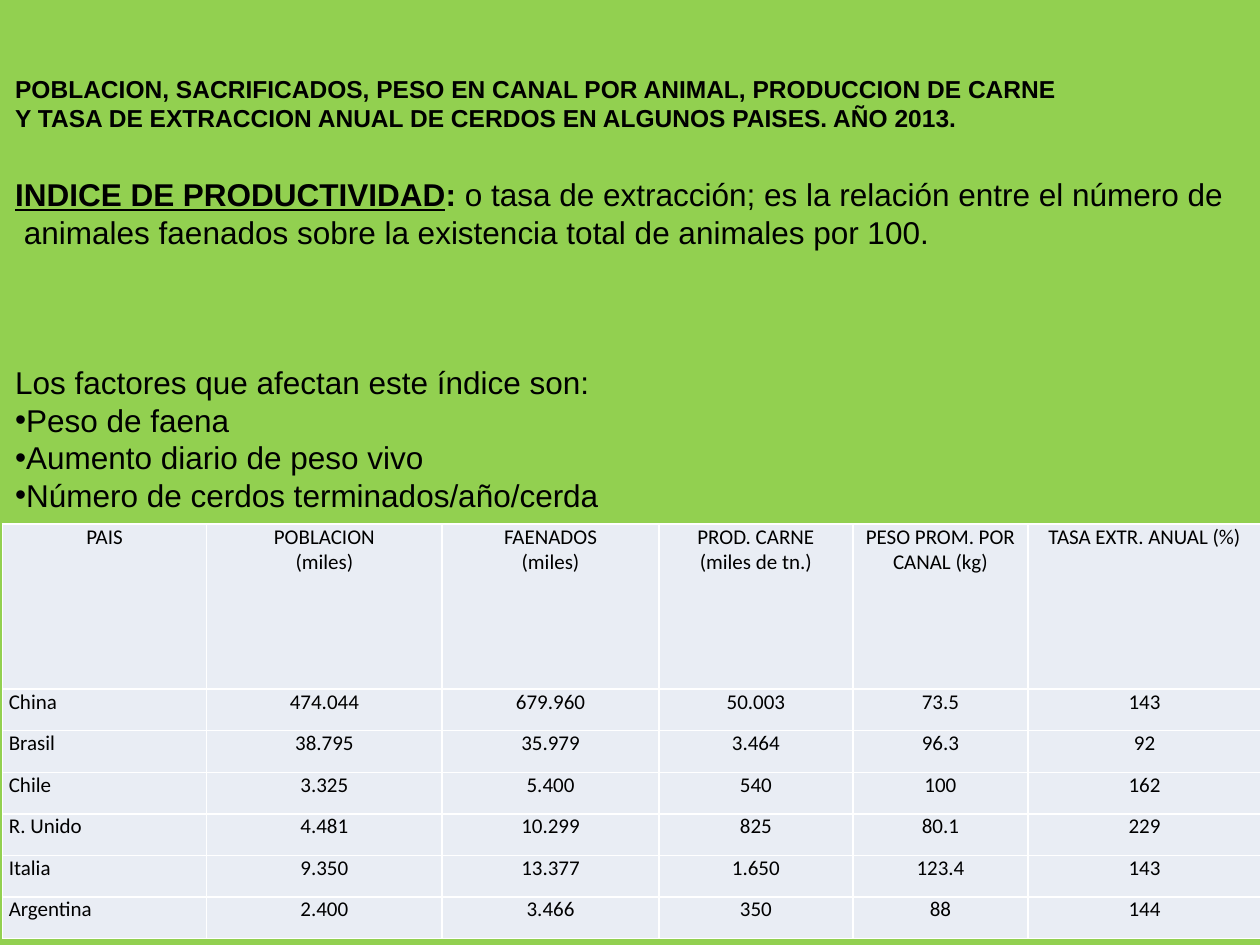
"""Build the slide on pig population, slaughter and extraction rate."""
from lxml import etree
from pptx import Presentation
from pptx.dml.color import RGBColor
from pptx.enum.text import MSO_ANCHOR, MSO_AUTO_SIZE, PP_ALIGN
from pptx.oxml.ns import qn
from pptx.util import Inches, Pt

LEFT, CENTER = PP_ALIGN.LEFT, PP_ALIGN.CENTER
TOP, NO_FIT = MSO_ANCHOR.TOP, MSO_AUTO_SIZE.NONE

TITLE = [
    "POBLACION, SACRIFICADOS, PESO EN CANAL POR ANIMAL, PRODUCCION DE CARNE",
    "Y TASA DE EXTRACCION ANUAL DE CERDOS EN ALGUNOS PAISES. AÑO 2013.",
]
FACTORS = [
    "Peso de faena",
    "Aumento diario de peso vivo",
    "Número de cerdos terminados/año/cerda",
]
COLUMNS = [1.62, 1.87, 1.72, 1.54, 1.39, 1.85]
ROWS = [
    ["PAIS", "POBLACION\n(miles)", "FAENADOS\n(miles)", "PROD. CARNE\n(miles de tn.)",
     "PESO PROM. POR CANAL (kg)", "TASA EXTR. ANUAL (%)"],
    ["China", "474.044", "679.960", "50.003", "73.5", "143"],
    ["Brasil", "38.795", "35.979", "3.464", "96.3", "92"],
    ["Chile", "3.325", "5.400", "540", "100", "162"],
    ["R. Unido", "4.481", "10.299", "825", "80.1", "229"],
    ["Italia", "9.350", "13.377", "1.650", "123.4", "143"],
    ["Argentina", "2.400", "3.466", "350", "88", "144"],
]


def color(value):
    """Turn a hex string into a colour."""
    return RGBColor.from_string(value)


def add_run(p, text, font="Arial", size=18, bold=False, underline=False, fill="000000"):
    """Add a formatted run to a paragraph."""
    r = p.add_run()
    r.text = text
    r.font.name, r.font.size = font, Pt(size)
    r.font.bold, r.font.underline = bold, underline
    r.font.color.rgb = color(fill)


class SlideBuilder:
    """Hold the style and the current slide."""

    background, cell_fill, border = "92D050", "E9EDF4", "FFFFFF"

    def __init__(self, prs):
        """Add a title and content slide with a plain background."""
        self.s = prs.slides.add_slide(prs.slide_layouts[1])
        fill = self.s.background.fill
        fill.solid()
        fill.fore_color.rgb = color(self.background)

    def placeholder(self, index, left, top, width, height):
        """Move a placeholder and return its text frame."""
        sp = self.s.placeholders[index]
        sp.left, sp.top = Inches(left), Inches(top)
        sp.width, sp.height = Inches(width), Inches(height)
        tf = sp.text_frame
        tf.word_wrap, tf.auto_size, tf.vertical_anchor = True, NO_FIT, TOP
        tf.margin_left = tf.margin_right = Inches(0.1)
        tf.margin_top = tf.margin_bottom = 0
        return tf

    def paragraph(self, tf, runs, spacing=21.5, before=0, margin=0, bullet=None):
        """Fill the first empty paragraph or add one after the others."""
        p = tf.paragraphs[0] if not tf.text else tf.add_paragraph()
        p.alignment = LEFT
        p.line_spacing, p.space_before, p.space_after = Pt(spacing), Pt(before), Pt(0)
        pPr = p._p.get_or_add_pPr()
        pPr.set("marL", str(Inches(margin)))
        pPr.set("indent", "0")
        if bullet:
            etree.SubElement(pPr, qn("a:buChar")).set("char", bullet)
        else:
            etree.SubElement(pPr, qn("a:buNone"))
        for text, style in runs:
            add_run(p, text, **style)

    def cell(self, cell, text, align):
        """Write, fill and border one table cell."""
        cell.margin_left = cell.margin_right = Inches(0.05)
        cell.margin_top = cell.margin_bottom = 0
        tf = cell.text_frame
        for i, line in enumerate(text.split("\n")):
            p = tf.add_paragraph() if i else tf.paragraphs[0]
            p.alignment = align
            add_run(p, line, font="Calibri", size=12)
        tcPr = cell._tc.get_or_add_tcPr()
        for side in ("lnL", "lnR", "lnT", "lnB"):
            ln = etree.SubElement(tcPr, qn(f"a:{side}"))
            ln.set("w", str(Pt(1)))
            solid = etree.SubElement(ln, qn("a:solidFill"))
            etree.SubElement(solid, qn("a:srgbClr")).set("val", self.border)
        cell.fill.solid()
        cell.fill.fore_color.rgb = color(self.cell_fill)

    def table(self, rows, columns, left, top, header_height, row_height):
        """Add a table with a tall header row and equal data rows."""
        height = header_height + row_height * (len(rows) - 1)
        table = self.s.shapes.add_table(
            len(rows), len(columns), Inches(left), Inches(top),
            Inches(sum(columns)), Inches(height)).table
        table.first_row = table.horz_banding = False
        for column, width in zip(table.columns, columns):
            column.width = Inches(width)
        for i, values in enumerate(rows):
            table.rows[i].height = Inches(row_height if i else header_height)
            for j, text in enumerate(values):
                self.cell(table.cell(i, j), text, LEFT if i and j == 0 else CENTER)


def main():
    """Build and save the presentation."""
    prs = Presentation()
    prs.slide_width, prs.slide_height = Inches(10), Inches(7.5)
    b = SlideBuilder(prs)

    title = b.placeholder(0, 0.02, 0.58, 9.88, 0.6)
    for line in TITLE:
        b.paragraph(title, [(line, {"size": 14, "bold": True})], spacing=17.1)

    body = b.placeholder(1, 0.02, 1.39, 9.88, 2.77)
    b.paragraph(body, [
        ("INDICE DE PRODUCTIVIDAD", {"bold": True, "underline": True}),
        (": ", {"bold": True}),
        ("o tasa de extracción; es la relación entre el número de", {}),
    ])
    b.paragraph(body, [
        ("animales faenados sobre la existencia total de animales por 100.", {}),
    ], margin=0.07)
    b.paragraph(body, [("Los factores que afectan este índice son:", {})], before=64.5)
    for factor in FACTORS:
        b.paragraph(body, [(factor, {})], bullet="•")

    b.table(ROWS, COLUMNS, 0.02, 4.16, 1.31, 0.33)
    prs.save("out.pptx")


if __name__ == "__main__":
    main()
